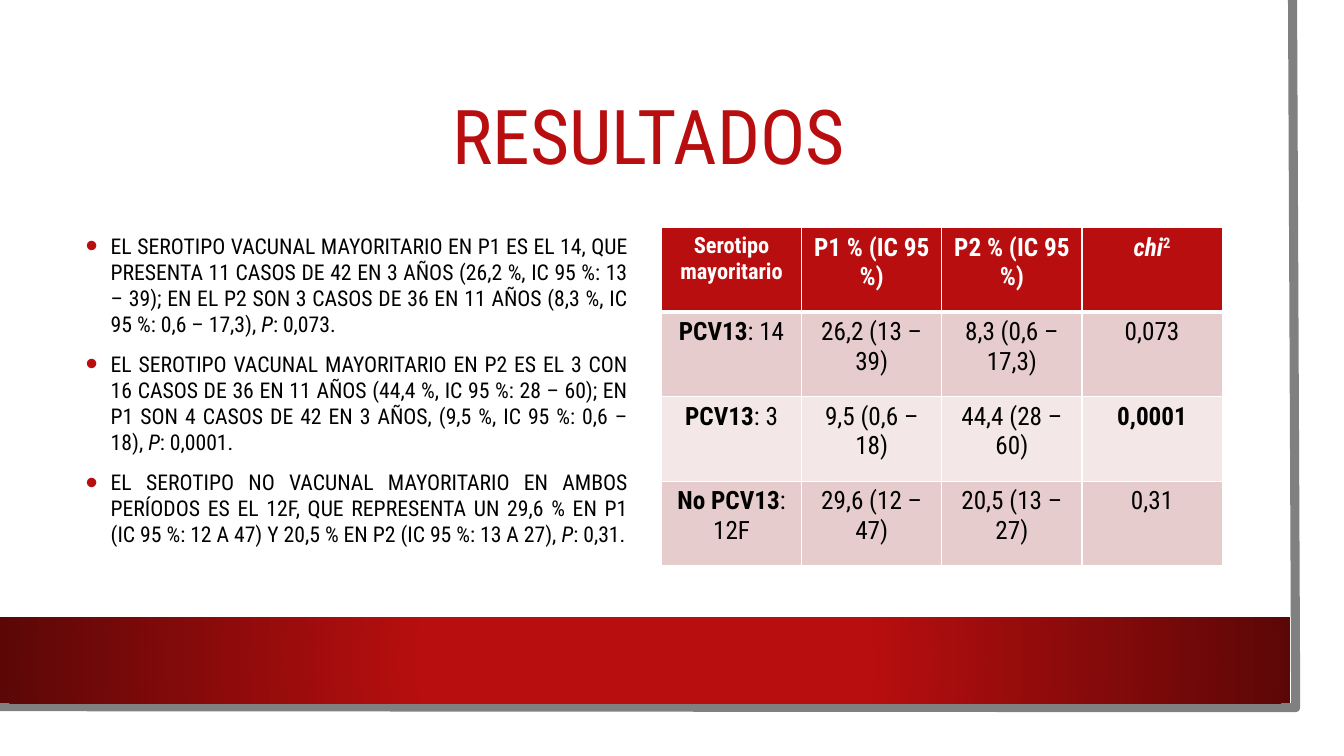
from dataclasses import dataclass
from typing import NamedTuple

import lxml.etree
import pptx
import pptx.dml.color
import pptx.enum.shapes
import pptx.enum.text
import pptx.oxml
import pptx.oxml.ns
import pptx.util

EMU_PER_PX = 9525
FONT = "Roboto Condensed"
RED, DARK_RED, WHITE, BLACK, GRAY = "B80E0F", "5C0707", "FFFFFF", "000000", "808080"
ROW_FILLS = [RED, "E6CCCC", "F3E7E7", "E6CCCC"]
ALIGN = pptx.enum.text.PP_ALIGN
NAMESPACE = 'xmlns:a="http://schemas.openxmlformats.org/drawingml/2006/main"'


class Box(NamedTuple):
    left: int
    top: int
    width: int
    height: int


@dataclass(frozen=True)
class Run:
    text: str
    bold: bool = False
    italic: bool = False
    superscript: bool = False


SHEET = Box(0, 0, 1258, 698)
BAND = Box(0, 588, 1229, 82)
TITLE = Box(72, 72, 1092, 122)
FINDINGS = Box(72, 217, 535, 348)
TABLE = Box(630, 217, 534, 322)
FRAME_POINTS = [(1231, 0), (1234, 674), (-3, 673)]

# Each finding: statement and P value
FINDING_TEXTS = [
    ("EL SEROTIPO VACUNAL MAYORITARIO EN P1 ES EL 14, QUE PRESENTA 11 CASOS DE 42 "
     "EN 3 AÑOS (26,2 %, IC 95 %: 13 – 39); EN EL P2 SON 3 CASOS DE 36 EN 11 AÑOS "
     "(8,3 %, IC 95 %: 0,6 – 17,3), ", "0,073"),
    ("EL SEROTIPO VACUNAL MAYORITARIO EN P2 ES EL 3 CON 16 CASOS DE 36 EN 11 AÑOS "
     "(44,4 %, IC 95 %: 28 – 60); EN P1 SON 4 CASOS DE 42 EN 3 AÑOS, "
     "(9,5 %, IC 95 %: 0,6 – 18), ", "0,0001"),
    ("EL SEROTIPO NO VACUNAL MAYORITARIO EN AMBOS PERÍODOS ES EL 12F, QUE REPRESENTA "
     "UN 29,6 % EN P1 (IC 95 %: 12 A 47) Y 20,5 % EN P2 (IC 95 %: 13 A 27), ", "0,31"),
]

TABLE_ROWS = [
    [[Run("Serotipo mayoritario", bold=True)], [Run("P1 % (IC 95 %)", bold=True)],
     [Run("P2 % (IC 95 %)", bold=True)],
     [Run("chi", bold=True, italic=True), Run("2", bold=True, superscript=True)]],
    [[Run("PCV13", bold=True), Run(": 14")], [Run("26,2 (13 – 39)")],
     [Run("8,3 (0,6 – 17,3)")], [Run("0,073")]],
    [[Run("PCV13", bold=True), Run(": 3")], [Run("9,5 (0,6 – 18)")],
     [Run("44,4 (28 – 60)")], [Run("0,0001", bold=True)]],
    [[Run("No PCV13", bold=True), Run(": 12F")], [Run("29,6 (12 – 47)")],
     [Run("20,5 (13 – 27)")], [Run("0,31")]],
]


def px(length: int) -> int:
    return length * EMU_PER_PX


def emu(box: Box) -> list[int]:
    return [px(length) for length in box]


def color(value: str) -> pptx.dml.color.RGBColor:
    return pptx.dml.color.RGBColor.from_string(value)


def apply(target, values: dict) -> None:
    for name, value in values.items():
        setattr(target, name, value)


def paint(fill, value: str) -> None:
    fill.solid()
    fill.fore_color.rgb = color(value)


def write_runs(paragraph, runs: list[Run], size: float, value: str) -> None:
    for item in runs:
        run = paragraph.add_run()
        apply(run, {"text": item.text})
        apply(run.font, {"name": FONT, "size": pptx.util.Pt(size),
                         "bold": item.bold, "italic": item.italic})
        run.font.color.rgb = color(value)
        if item.superscript:
            run.font._element.set("baseline", "30000")


def add_rectangle(slide, box: Box):
    shape = slide.shapes.add_shape(pptx.enum.shapes.MSO_SHAPE.RECTANGLE, *emu(box))
    shape.shadow.inherit = False
    shape.line.fill.background()
    return shape


def add_background(slide) -> None:
    paint(add_rectangle(slide, SHEET).fill, WHITE)

    builder = slide.shapes.build_freeform(*FRAME_POINTS[0], scale=EMU_PER_PX)
    builder.add_line_segments(FRAME_POINTS[1:], close=False)
    frame = builder.convert_to_shape()
    frame.shadow.inherit = False
    frame.fill.background()
    paint(frame.line.fill, GRAY)
    frame.line.width = pptx.util.Pt(6.5)

    band = add_rectangle(slide, BAND)
    gradient = pptx.oxml.parse_xml(
        f'<a:gradFill {NAMESPACE} rotWithShape="1"><a:gsLst>'
        f'<a:gs pos="34000"><a:srgbClr val="{RED}"/></a:gs>'
        f'<a:gs pos="100000"><a:srgbClr val="{DARK_RED}"/></a:gs></a:gsLst>'
        '<a:path path="circle"><a:fillToRect l="50000" t="50000" r="50000" b="50000"/>'
        '</a:path></a:gradFill>')
    band._element.spPr.find(pptx.oxml.ns.qn("a:prstGeom")).addnext(gradient)


def format_title(slide) -> None:
    title = slide.shapes.title
    slide.shapes._spTree.append(title._element)  # in front of the background
    apply(title, dict(zip(("left", "top", "width", "height"), emu(TITLE))))
    title.text_frame.vertical_anchor = pptx.enum.text.MSO_ANCHOR.MIDDLE
    paragraph = title.text_frame.paragraphs[0]
    apply(paragraph, {"alignment": ALIGN.CENTER, "line_spacing": 0.9})
    write_runs(paragraph, [Run("RESULTADOS")], 54, RED)


def add_bullet(paragraph) -> None:
    properties = paragraph._element.get_or_add_pPr()
    properties.set("marL", str(px(24)))
    properties.set("indent", str(px(-24)))
    for xml in (f'<a:buClr {NAMESPACE}><a:srgbClr val="{RED}"/></a:buClr>',
                f'<a:buSzPct {NAMESPACE} val="160000"/>',
                f'<a:buFont {NAMESPACE} typeface="Arial"/>',
                f'<a:buChar {NAMESPACE} char="•"/>'):
        properties.append(pptx.oxml.parse_xml(xml))


def add_findings(slide) -> None:
    frame = slide.shapes.add_textbox(*emu(FINDINGS)).text_frame
    frame.word_wrap = True
    for index, (statement, p_value) in enumerate(FINDING_TEXTS):
        paragraph = frame.add_paragraph() if index else frame.paragraphs[0]
        add_bullet(paragraph)
        apply(paragraph, {"alignment": ALIGN.JUSTIFY,
                          "space_before": pptx.util.Pt(10 if index else 0)})
        runs = [Run(statement), Run("P", italic=True), Run(f": {p_value}.")]
        write_runs(paragraph, runs, 15.5, BLACK)


def add_borders(cell, widths: dict[str, int]) -> None:
    properties = cell._tc.get_or_add_tcPr()
    for side, width in widths.items():
        line = lxml.etree.SubElement(properties, pptx.oxml.ns.qn(f"a:ln{side}"),
                                     w=str(pptx.util.Pt(width)))
        fill = lxml.etree.SubElement(line, pptx.oxml.ns.qn("a:solidFill"))
        lxml.etree.SubElement(fill, pptx.oxml.ns.qn("a:srgbClr"), val=WHITE)


def add_serotype_table(slide) -> None:
    row_count, column_count = len(TABLE_ROWS), len(TABLE_ROWS[0])
    table = slide.shapes.add_table(row_count, column_count, *emu(TABLE)).table
    for column in table.columns:
        column.width = px(TABLE.width) // column_count
    for row_index, cells in enumerate(TABLE_ROWS):
        table.rows[row_index].height = px(TABLE.height) // row_count
        header = row_index == 0
        for column_index, runs in enumerate(cells):
            cell = table.cell(row_index, column_index)
            add_borders(cell, {"L": 1, "R": 1, "T": 3 if row_index == 1 else 1,
                               "B": 3 if header else 1})
            paint(cell.fill, ROW_FILLS[row_index])
            paragraph = cell.text_frame.paragraphs[0]
            paragraph.alignment = ALIGN.CENTER
            size = 16 if header and column_index == 0 else 18
            write_runs(paragraph, runs, size, WHITE if header else BLACK)


def main() -> None:
    presentation = pptx.Presentation()
    apply(presentation, {"slide_width": px(1280), "slide_height": px(720)})
    slide = presentation.slides.add_slide(presentation.slide_layouts.get_by_name("Title Only"))
    add_background(slide)
    format_title(slide)
    add_findings(slide)
    add_serotype_table(slide)
    presentation.save("out.pptx")


if __name__ == "__main__":
    main()
